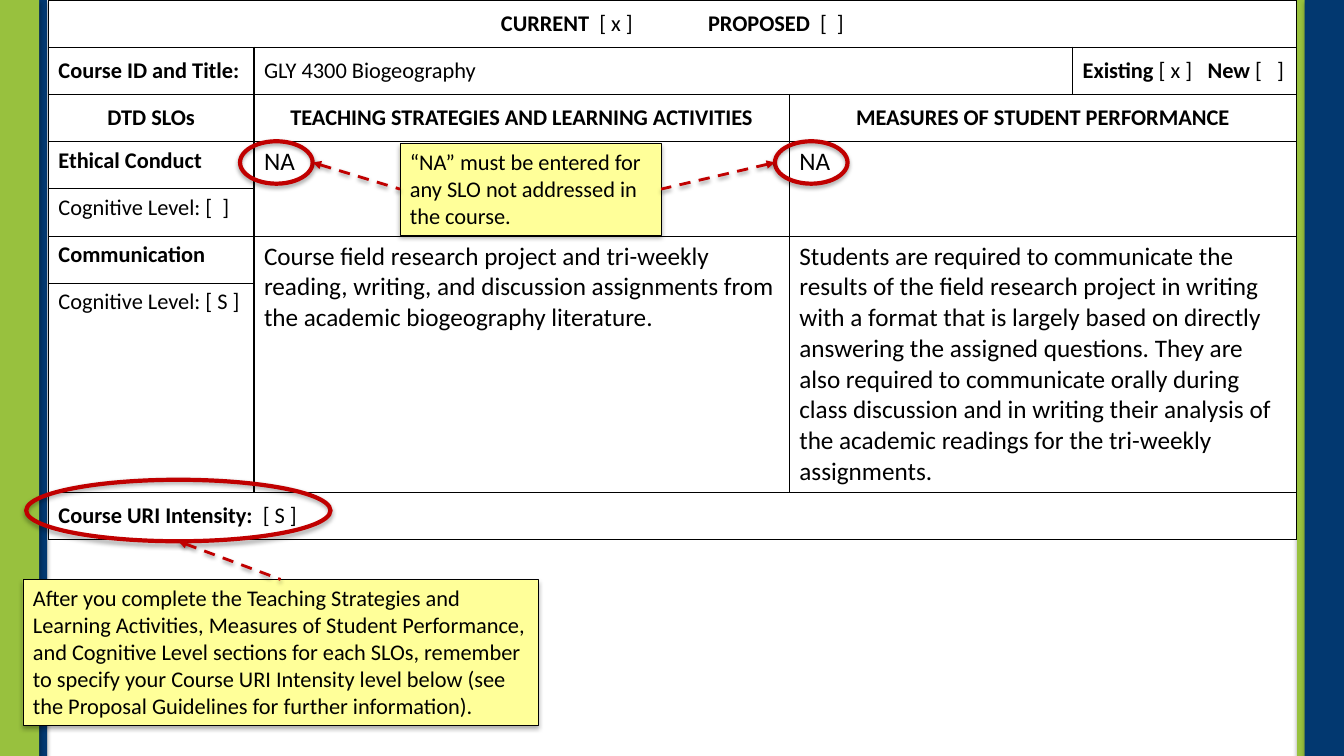
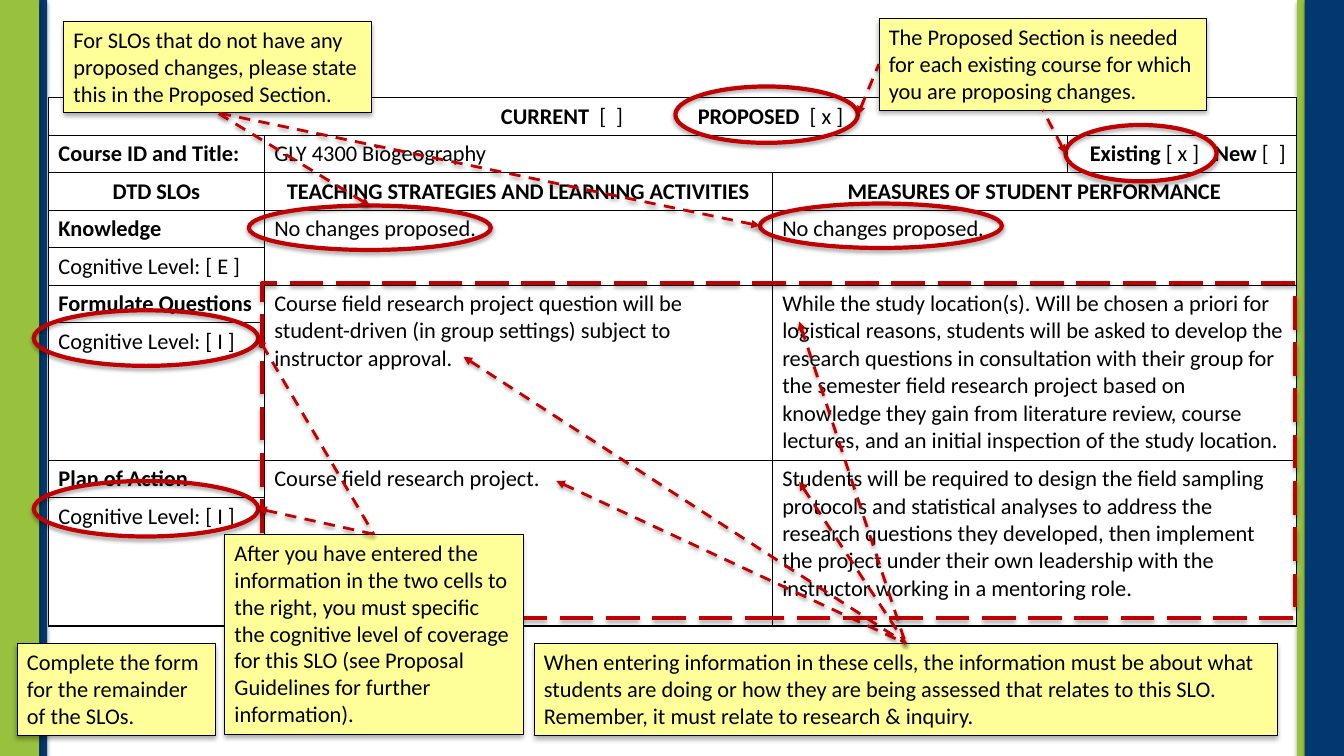
from pptx import Presentation
from pptx.dml.color import RGBColor
from pptx.enum.dml import MSO_LINE
from pptx.enum.shapes import MSO_CONNECTOR, MSO_SHAPE
from pptx.enum.text import MSO_ANCHOR, MSO_AUTO_SIZE, PP_ALIGN
from pptx.oxml import parse_xml
from pptx.oxml.ns import nsdecls
from pptx.util import Cm, Pt

FONT = "Calibri"
BLACK, WHITE, YELLOW = "000000", "FFFFFF", "FFFF99"
RED, NAVY, GREEN = "C00000", "023870", "98C13E"
SLIDE_WIDTH, SLIDE_HEIGHT = 33.87, 19.05
BAND_WIDTH = 0.99
TABLE_LEFT = 1.22
TOP, LEFT, BOTTOM, RIGHT = range(4)
# opacity in percent, then blur and distance in points
SHAPE_SHADOW = (35, 3.1, 1.8)
CALLOUT_SHADOW = (32, 3.5, 2.2)
ARROW_SHADOW = (38, 3.1, 1.6)


def paint(colour_format, colour):
    colour_format.rgb = RGBColor.from_string(colour)


def cast_shadow(element, shadow):
    opacity, blur, distance = shadow
    element.spPr.append(parse_xml(
        f'<a:effectLst {nsdecls("a")}>'
        f'<a:outerShdw blurRad="{Pt(blur)}" dist="{Pt(distance)}" dir="5400000" rotWithShape="0">'
        f'<a:srgbClr val="{BLACK}"><a:alpha val="{opacity * 1000}"/></a:srgbClr>'
        '</a:outerShdw></a:effectLst>'))


def write(frame, text, size=16, bold=False, align=PP_ALIGN.LEFT, tabs=()):
    """Fill a text frame; parts between asterisks are bold, tabs are in cm."""
    frame.word_wrap = True
    paragraph = frame.paragraphs[0]
    paragraph.alignment = align
    if tabs:
        stops = "".join(f'<a:tab pos="{Cm(stop)}" algn="l"/>' for stop in tabs)
        properties = paragraph._p.get_or_add_pPr()
        properties.append(parse_xml(f'<a:tabLst {nsdecls("a")}>{stops}</a:tabLst>'))
    for index, part in enumerate(text.split("*")):
        if part:
            run = paragraph.add_run()
            run.text = part
            run.font.name = FONT
            run.font.size = Pt(size)
            run.font.bold = bold or index % 2 == 1
            paint(run.font.color, BLACK)


def add_box(slide, kind, box, fill=None, line=None, width=3, dash=None, shadow=SHAPE_SHADOW):
    """Draw a preset shape; box is left, top, width, height in cm."""
    shape = slide.shapes.add_shape(kind, *map(Cm, box))
    if fill:
        shape.fill.solid()
        paint(shape.fill.fore_color, fill)
    else:
        shape.fill.background()
    if line:
        paint(shape.line.color, line)
        shape.line.width = Pt(width)
        if dash:
            shape.line.dash_style = dash
    else:
        shape.line.fill.background()
    cast_shadow(shape._element, shadow)
    return shape


def add_ring(slide, *box):
    return add_box(slide, MSO_SHAPE.OVAL, box, line=RED)


def add_callout(slide, text, *box):
    callout = add_box(slide, MSO_SHAPE.RECTANGLE, box, YELLOW, BLACK, 0.25,
                      shadow=CALLOUT_SHADOW)
    frame = callout.text_frame
    write(frame, text)
    frame.vertical_anchor = MSO_ANCHOR.TOP
    frame.auto_size = MSO_AUTO_SIZE.SHAPE_TO_FIT_TEXT
    return callout


def edge(shape, side):
    """Middle of one side of a shape."""
    x = shape.left + {LEFT: 0, RIGHT: shape.width}.get(side, shape.width // 2)
    y = shape.top + {TOP: 0, BOTTOM: shape.height}.get(side, shape.height // 2)
    return x, y


def add_arrow(slide, tip, callout, side):
    """Dashed arrow whose head is at tip and whose tail is joined to a callout."""
    arrow = slide.shapes.add_connector(MSO_CONNECTOR.STRAIGHT, *tip, *edge(callout, side))
    arrow.end_connect(callout, side)
    paint(arrow.line.color, RED)
    arrow.line.width = Pt(2)
    arrow.line.dash_style = MSO_LINE.DASH
    arrow.line._get_or_add_ln().append(
        parse_xml(f'<a:headEnd {nsdecls("a")} type="triangle"/>'))
    cast_shadow(arrow._element, ARROW_SHADOW)


def add_master_bands(master, slide):
    """Draw the side bands and move them to the master, behind every slide."""
    bands = [(0.2, NAVY), (32.69, GREEN), (0, GREEN), (SLIDE_WIDTH - BAND_WIDTH, NAVY)]
    for number, (left, colour) in enumerate(bands, 101):
        band = add_box(slide, MSO_SHAPE.RECTANGLE, (left, 0, BAND_WIDTH, SLIDE_HEIGHT), colour)
        band._element.nvSpPr.cNvPr.set("id", str(number))
        master.shapes._spTree.append(band._element)


def style_cell(cell):
    cell.fill.solid()
    paint(cell.fill.fore_color, WHITE)
    properties = cell._tc.get_or_add_tcPr()
    for index, side in enumerate("LRTB"):
        properties.insert(index, parse_xml(
            f'<a:ln{side} {nsdecls("a")} w="{Pt(1)}"><a:solidFill>'
            f'<a:srgbClr val="{BLACK}"/></a:solidFill></a:ln{side}>'))


def add_form(slide, top, columns, heights, status, existing, slos,
             intensity=None, answer_size=16, anchor=MSO_ANCHOR.TOP):
    """Course form; status and existing are pairs of text and tab stops."""
    table = slide.shapes.add_table(
        len(heights), len(columns), Cm(TABLE_LEFT), Cm(top),
        Cm(sum(columns)), Cm(sum(heights))).table
    table.first_row = table.horz_banding = False
    for column, width in zip(table.columns, columns):
        column.width = Cm(width)
    for row, height in zip(table.rows, heights):
        row.height = Cm(height)
    for cell in table.iter_cells():
        style_cell(cell)

    def put(row, column, text, rows=1, span=1, anchor=anchor, **text_format):
        cell = table.cell(row, column)
        if rows * span > 1:
            cell.merge(table.cell(row + rows - 1, column + span - 1))
        cell.vertical_anchor = anchor
        write(cell.text_frame, text, **text_format)

    put(0, 0, status[0], span=4, tabs=status[1])
    put(1, 0, "Course ID and Title:", bold=True)
    put(1, 1, "GLY 4300 Biogeography", span=2)
    put(1, 3, existing[0], tabs=existing[1])
    headings = ["DTD SLOs", "TEACHING STRATEGIES AND LEARNING ACTIVITIES",
                "MEASURES OF STUDENT PERFORMANCE"]
    for column, heading in enumerate(headings):
        put(2, column, heading, span=1 + column // 2, bold=True, align=PP_ALIGN.CENTER)
    for index, (outcome, level, strategies, measures) in enumerate(slos):
        row = 3 + 2 * index
        put(row, 0, outcome, bold=True, anchor=MSO_ANCHOR.TOP)
        put(row + 1, 0, f"Cognitive Level: [ {level} ]", anchor=MSO_ANCHOR.TOP)
        for column, answer in enumerate((strategies, measures), 1):
            put(row, column, answer, rows=2, span=column, size=answer_size,
                anchor=MSO_ANCHOR.TOP)
    if intensity:
        put(len(heights) - 1, 0, intensity, span=4)


def build_current(slide):
    slos = [
        ("Ethical Conduct", "", "NA", "NA"),
        ("Communication", "S",
         "Course field research project and tri-weekly reading, writing, and discussion "
         "assignments from the academic biogeography literature.",
         "Students are required to communicate the results of the field research project in "
         "writing with a format that is largely based on directly answering the assigned "
         "questions. They are also required to communicate orally during class discussion and "
         "in writing their analysis of the academic readings for the tri-weekly assignments."),
    ]
    add_form(slide, 0, [5.18, 13.49, 7.14, 5.64], [1.19] * 6 + [5.27, 1.19],
             ("\t*CURRENT*  [ x ]\t*PROPOSED*  [  ]", (11.15, 16.37)),
             ("*Existing* [ x ]\t*New* [   ]", (3.15,)),
             slos, "*Course URI Intensity:*  [ S ]", 18, MSO_ANCHOR.MIDDLE)

    intensity_ring = add_ring(slide, 0.66, 12.09, 7.67, 1.55)
    strategies_ring, measures_ring = (
        add_ring(slide, left, 3.56, 1.83, 1.07) for left in (6.05, 19.53))
    intensity_note = add_callout(
        slide, "After you complete the Teaching Strategies and Learning Activities, Measures of "
        "Student Performance, and Cognitive Level sections for each SLOs, remember to specify "
        "your Course URI Intensity level below (see the Proposal Guidelines for further "
        "information).", 0.58, 14.6, 12.98, 3.68)
    na_note = add_callout(
        slide, "“NA” must be entered for any SLO not addressed in the course.",
        10.08, 3.61, 6.58, 2.31)
    add_arrow(slide, edge(intensity_ring, BOTTOM), intensity_note, TOP)
    add_arrow(slide, edge(strategies_ring, RIGHT), na_note, LEFT)
    add_arrow(slide, edge(measures_ring, LEFT), na_note, RIGHT)


def build_proposed(slide):
    unchanged = "No changes proposed."
    slos = [
        ("Knowledge", "E", unchanged, unchanged),
        ("Formulate Questions", "I",
         "Course field research project question will be student-driven (in group settings) "
         "subject to instructor approval.",
         "While the study location(s). Will be chosen a priori for logistical reasons, students "
         "will be asked to develop the research questions in consultation with their group for "
         "the semester field research project based on knowledge they gain from literature "
         "review, course lectures, and an initial inspection of the study location."),
        ("Plan of Action", "I", "Course field research project.",
         "Students will be required to design the field sampling protocols and statistical "
         "analyses to address the research questions they developed, then implement the project "
         "under their own leadership with the instructor working in a mentoring role."),
    ]
    add_form(slide, 2.46, [5.44, 12.8, 7.44, 5.77], [0.94] * 6 + [3.47, 0.94, 3.23],
             ("\t*CURRENT*  [  ]\t*PROPOSED*  [ x ]", (11.15, 16.11)),
             ("\t*Existing* [ x ]\t*New* [  ]", (0.31, 3.45)), slos)

    existing_ring = add_ring(slide, 26.85, 3.15, 3.81, 1.42)
    proposed_ring = add_ring(slide, 17.02, 2.18, 4.6, 1.42)
    strategies_ring = add_ring(slide, 6.27, 5.18, 6.1, 1.12)
    measures_ring = add_ring(slide, 19.15, 5.13, 6.1, 1.12)
    level_rings = [add_ring(slide, 0.85, top, 5.66, 1.4) for top in (7.82, 12.12)]
    add_box(slide, MSO_SHAPE.RECTANGLE, (6.6, 7.14, 26.04, 8.43), line=RED,
            dash=MSO_LINE.LONG_DASH)

    proposed_note = add_callout(
        slide, "The Proposed Section is needed for each existing course for which you are "
        "proposing changes.", 22.15, 0.46, 8.26, 2.31)
    unchanged_note = add_callout(
        slide, "For SLOs that do not have any proposed changes, please state this in the "
        "Proposed Section.", 1.6, 0.53, 7.75, 2.31)
    add_callout(slide, "Complete the form for the remainder of the SLOs.",
                0.43, 16.21, 5, 2.31)
    cells_note = add_callout(
        slide, "When entering information in these cells, the information must be about what "
        "students are doing or how they are being assessed that relates to this SLO. Remember, "
        "it must relate to research & inquiry.", 13.46, 16.21, 18.72, 2.31)
    level_note = add_callout(
        slide, "After you have entered the information in the two cells to the right, you must "
        "specific the cognitive level of coverage for this SLO (see Proposal Guidelines for "
        "further information).", 5.66, 13.46, 7.52, 5.05)

    add_arrow(slide, edge(proposed_ring, RIGHT), proposed_note, LEFT)
    add_arrow(slide, edge(existing_ring, LEFT), proposed_note, BOTTOM)
    add_arrow(slide, edge(measures_ring, LEFT), unchanged_note, BOTTOM)
    add_arrow(slide, edge(strategies_ring, TOP), unchanged_note, BOTTOM)
    for x, y in [(11.68, 8.99), (20.14, 8.1), (20.14, 12.14), (14.02, 12.12)]:
        add_arrow(slide, (Cm(x), Cm(y)), cells_note, TOP)
    for ring in level_rings:
        add_arrow(slide, edge(ring, RIGHT), level_note, TOP)


def main():
    deck = Presentation()
    deck.slide_width, deck.slide_height = Cm(SLIDE_WIDTH), Cm(SLIDE_HEIGHT)
    blank = deck.slide_layouts[6]
    current, proposed = (deck.slides.add_slide(blank) for _ in range(2))
    add_master_bands(deck.slide_master, current)
    build_current(current)
    build_proposed(proposed)
    deck.save("out.pptx")


if __name__ == "__main__":
    main()
